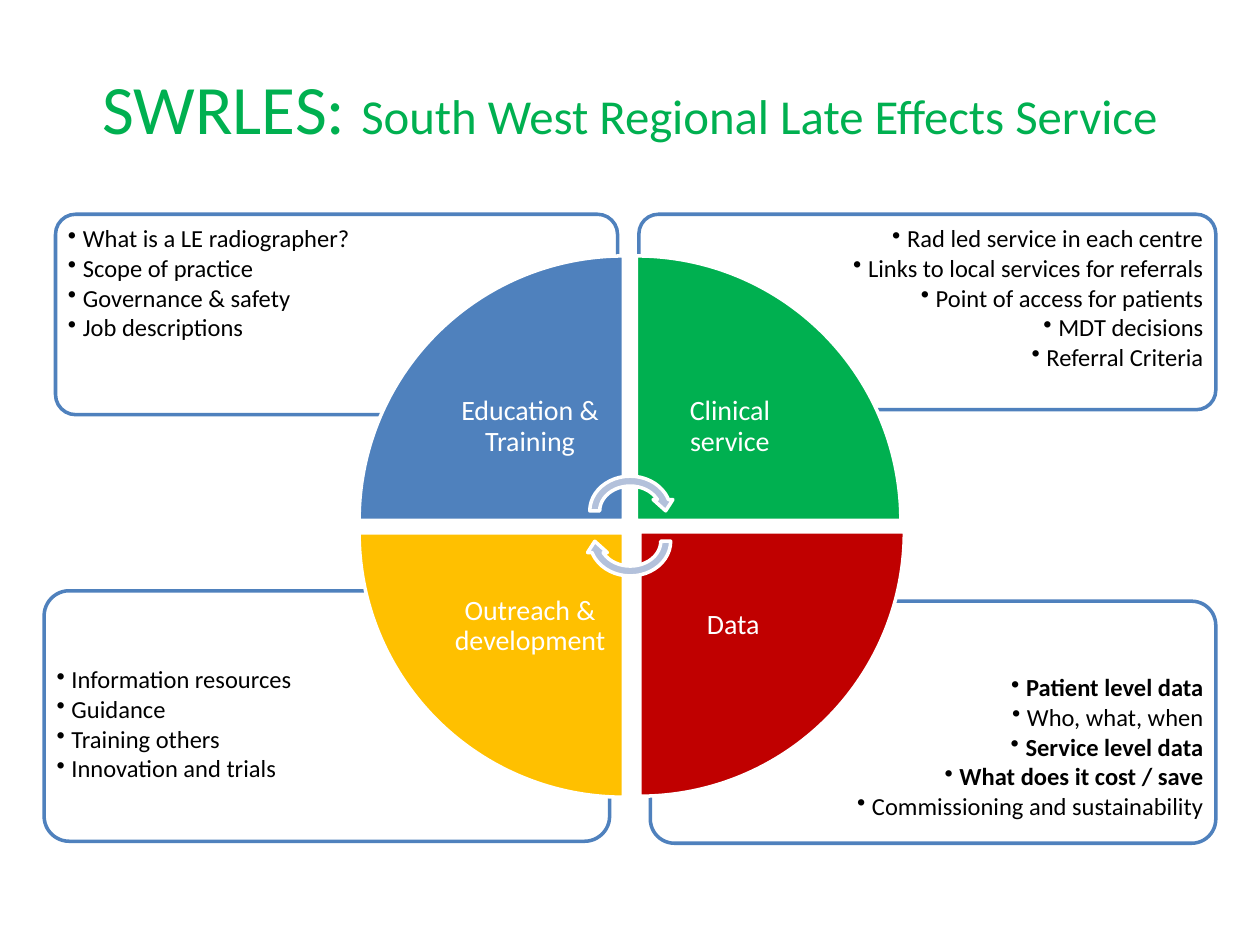
from lxml import etree
from pptx import Presentation
from pptx import util as u
from pptx.dml.color import RGBColor
from pptx.enum import shapes, text
from pptx.oxml import ns

COLOURS = {"blue": "4F81BD", "green": "00B050", "red": "C00000", "amber": "FFC000",
           "arrow": "B3C1DB", "white": "FFFFFF", "black": "000000"}
ALIGN = text.PP_ALIGN
PRESET = shapes.MSO_SHAPE

PANELS = [
    ((13.11, 12.12, 11.4, 4.88), "right", "bottom",
     [("Patient level data", True), ("Who, what, when", False), ("Service level data", True),
      ("What does it cost / save", True), ("Commissioning and sustainability", False)]),
    ((0.89, 11.91, 11.4, 5.05), "left", "bottom",
     [("Information resources", False), ("Guidance", False), ("Training others", False),
      ("Innovation and trials", False)]),
    ((12.88, 4.32, 11.63, 3.94), "right", "top",
     [("Rad led service in each centre", False), ("Links to local services for referrals", False),
      ("Point of access for patients", False), ("MDT decisions", False),
      ("Referral Criteria", False)]),
    ((1.12, 4.32, 11.33, 4.04), "left", "top",
     [("What is a LE radiographer?", False), ("Scope of practice", False),
      ("Governance & safety", False), ("Job descriptions", False)]),
]
WEDGES = [
    ((7.24, 5.16, 5.33, 5.33), 0, "blue", "Education & Training"),
    ((12.83, 5.16, 5.33, 5.33), 90, "green", "Clinical service"),
    ((12.9, 10.72, 5.33, 5.33), 180, "red", "Data"),
    ((7.24, 10.74, 5.33, 5.33), 270, "amber", "Outreach & development"),
]
ARROWS = [((11.79, 9.5, 1.83, 1.6), 0), ((11.79, 10.11, 1.83, 1.6), 180)]


def colour(name):
    """Return the named colour."""
    return RGBColor.from_string(COLOURS[name])


def lengths(box):
    """Turn a box in centimetres into lengths."""
    return [u.Cm(value) for value in box]


def add_preset(slide, preset, box, fill, line, rotation=0):
    """Add a filled, outlined preset shape without a shadow."""
    shape = slide.shapes.add_shape(preset, *lengths(box))
    shape.shadow.inherit = False
    shape.fill.solid()
    shape.fill.fore_color.rgb = colour(fill)
    shape.line.color.rgb = colour(line)
    shape.line.width = u.Pt(2)
    shape.rotation = rotation
    return shape


def add_frame(slide, box, inset, anchor):
    """Add a wrapping text box and return its text frame."""
    frame = slide.shapes.add_textbox(*lengths(box)).text_frame
    frame.word_wrap = True
    frame.vertical_anchor = anchor
    frame.margin_left = frame.margin_right = u.Cm(inset)
    frame.margin_top = frame.margin_bottom = u.Cm(min(inset, 0.3))
    return frame


def add_run(paragraph, words, size=14, ink="black", bold=False):
    """Add formatted text to a paragraph."""
    run = paragraph.add_run()
    run.text = words
    run.font.name = "Calibri"
    run.font.size = u.Pt(size)
    run.font.bold = bold
    run.font.color.rgb = colour(ink)


def add_bullet(paragraph):
    """Give a paragraph a hanging bullet."""
    properties = paragraph._p.get_or_add_pPr()
    properties.set("marL", str(u.Cm(0.3)))
    properties.set("indent", str(u.Cm(-0.3)))
    etree.SubElement(properties, ns.qn("a:buChar"), char="•")


def add_title(slide, box):
    """Add the two-size heading."""
    heading = add_frame(slide, box, 0.25, text.MSO_ANCHOR.MIDDLE).paragraphs[0]
    heading.alignment = ALIGN.CENTER
    add_run(heading, "SWRLES: ", size=39.6, ink="green")
    add_run(heading, "South West Regional Late Effects Service", size=27.9, ink="green")


def add_panel(slide, box, side, edge, points):
    """Add a rounded panel with its bullets in the outer corner."""
    left, top, width, height = box
    panel = add_preset(slide, PRESET.ROUNDED_RECTANGLE, box, "white", "blue")
    panel.adjustments[0] = 0.1
    gap, list_width, list_height = 0.1, width * 0.685, height * 0.703
    list_left = left + gap if side == "left" else left + width - gap - list_width
    list_top = top + gap if edge == "top" else top + height - gap - list_height
    frame = add_frame(slide, (list_left, list_top, list_width, list_height), 0.15,
                      text.MSO_ANCHOR.TOP)
    for index, (words, bold) in enumerate(points):
        point = frame.add_paragraph() if index else frame.paragraphs[0]
        point.level = 1
        point.alignment = ALIGN.LEFT if side == "left" else ALIGN.RIGHT
        point.line_spacing = 0.9
        point.space_after = u.Pt(1.8)
        add_bullet(point)
        add_run(point, words, bold=bold)


def add_wedge(slide, box, rotation, fill, words):
    """Add a quarter of the wheel with its label towards the hub."""
    left, top, size, _ = box
    add_preset(slide, PRESET.PIE_WEDGE, box, fill, "white", rotation)
    label_size = size * 0.707
    label_left = left + size - label_size if rotation in (0, 270) else left
    label_top = top + size - label_size if rotation in (0, 90) else top
    frame = add_frame(slide, (label_left, label_top, label_size, label_size), 0.3,
                      text.MSO_ANCHOR.MIDDLE)
    label = frame.paragraphs[0]
    label.alignment = ALIGN.CENTER
    label.line_spacing = 0.9
    add_run(label, words, size=16, ink="white")


def main():
    """Build and save the slide."""
    deck = Presentation()
    deck.slide_width, deck.slide_height = u.Cm(25.4), u.Cm(19.05)
    slide = deck.slides.add_slide(deck.slide_layouts[6])
    for panel in PANELS:
        add_panel(slide, *panel)
    for wedge in WEDGES:
        add_wedge(slide, *wedge)
    for box, rotation in ARROWS:
        add_preset(slide, PRESET.CIRCULAR_ARROW, box, "arrow", "white", rotation)
    add_title(slide, (1.27, 0.56, 22.86, 3.18))
    deck.save("out.pptx")


if __name__ == "__main__":
    main()
